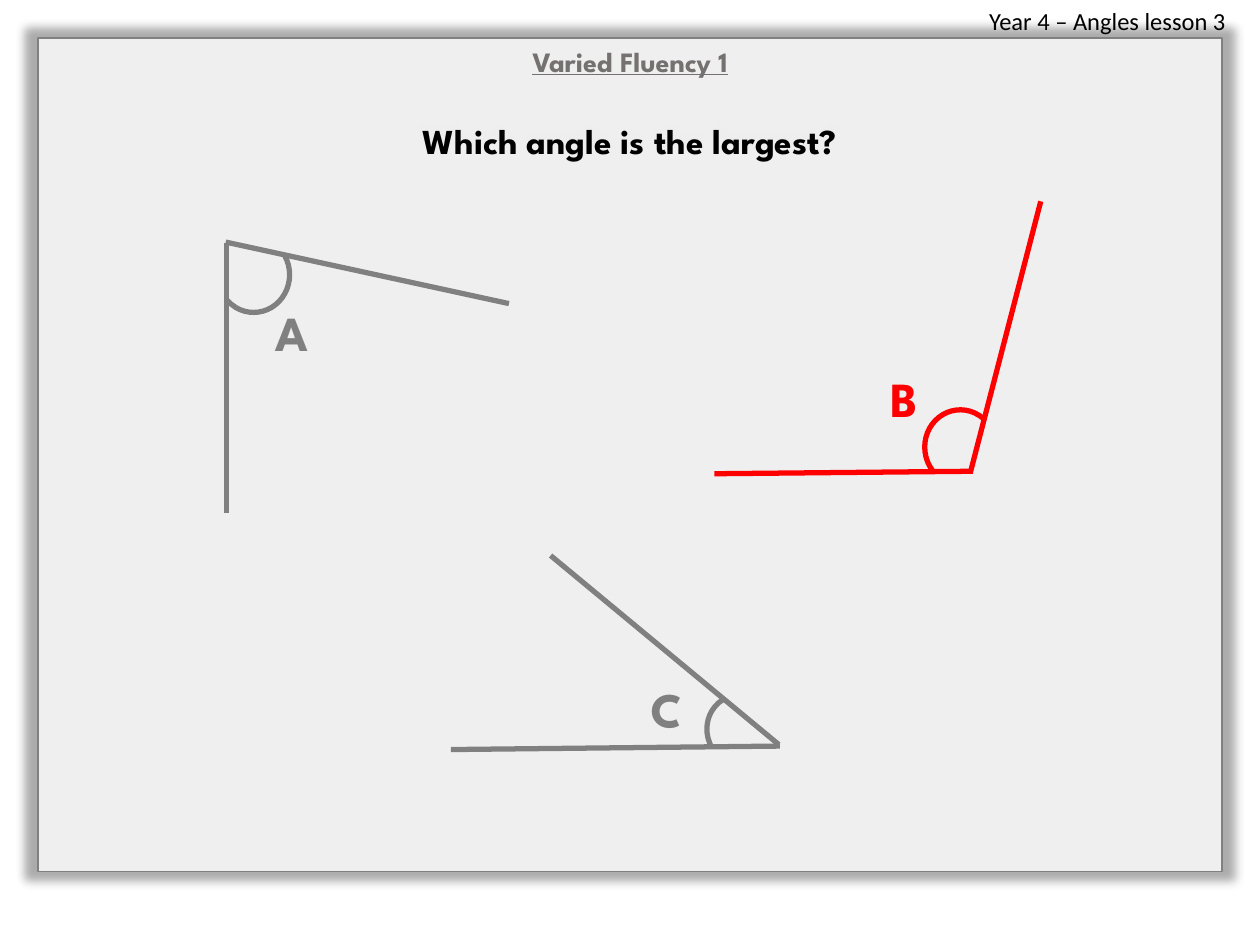
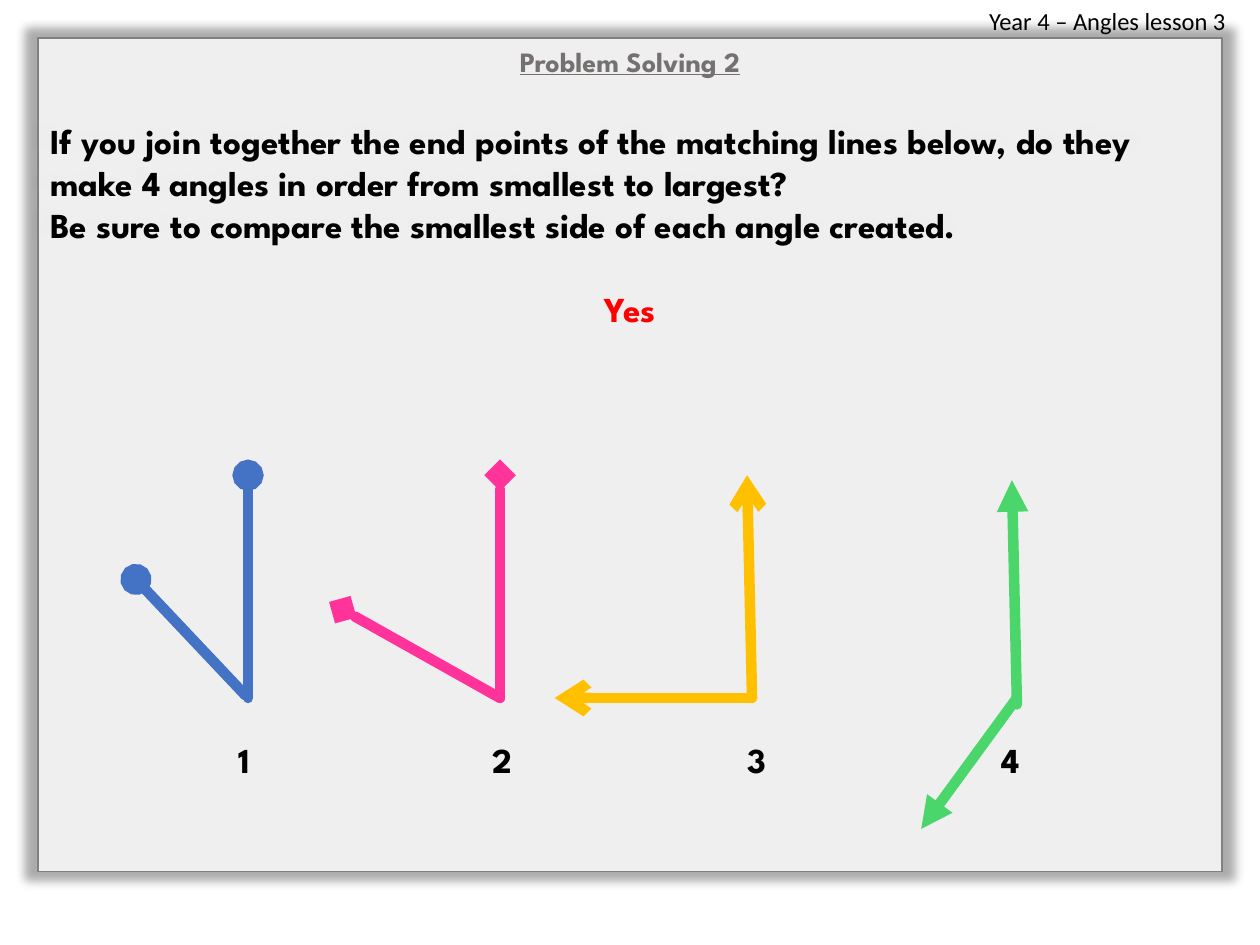
from dataclasses import dataclass

from lxml.etree import SubElement
from pptx import Presentation
from pptx.dml.color import RGBColor
from pptx.enum.shapes import MSO_CONNECTOR as Link, MSO_SHAPE as Preset
from pptx.enum.text import MSO_ANCHOR as Anchor, MSO_AUTO_SIZE as Fit, PP_ALIGN as Align
from pptx.oxml.ns import qn
from pptx.util import Cm, Pt


@dataclass(frozen=True)
class Theme:
    black: str = "000000"
    white: str = "FFFFFF"
    grey: str = "808080"
    title: str = "767171"
    red: str = "FF0000"
    blue: str = "4472C4"
    pink: str = "FF3399"
    gold: str = "FFC000"
    green: str = "4AD66B"
    font: str = "League Spartan"
    header_font: str = "Calibri"
    header_size: int = 14
    title_size: int = 16
    body_size: int = 20
    label_size: int = 28
    border: int = 1
    thin: int = 3
    thick: int = 6


PANEL = (0.76, 0.76, 23.88, 16.81)
HEADER = (19.69, 0, 5.49, 0.86)
ARC_SIZE = (1.45, 1.52)
LABEL_SIZE = (1.24, 1.45)
NUMBER_SIZE = (0.91, 1.12)


def set_all(target, values):
    for name, value in values.items():
        setattr(target, name, value)


def lengths(*values):
    return [Cm(value) for value in values]


class Lesson:
    def __init__(self, theme):
        self.theme = theme
        self.deck = Presentation()
        set_all(self.deck, {"slide_width": Cm(25.4), "slide_height": Cm(19.05)})
        self.page = None

    def add_page(self, title, paragraphs):
        theme = self.theme
        self.page = self.deck.slides.add_slide(self.deck.slide_layouts[5])
        self.add_text(HEADER, "Year 4 – Angles lesson 3", size=theme.header_size,
                      font=theme.header_font, bold=False)
        panel = self.add_panel(paragraphs)
        heading = self.page.shapes.title
        left, top, width, _ = PANEL
        set_all(heading, dict(zip(("left", "top", "width", "height"),
                                  lengths(left, top, width, 0.95))))
        self.format_frame(heading.text_frame, vertical_anchor=Anchor.TOP)
        self.fill_para(heading.text_frame.paragraphs[0], title, theme.title,
                       theme.title_size, align=Align.CENTER, underline=True)
        panel.element.addnext(heading.element)

    def add_panel(self, paragraphs):
        theme = self.theme
        panel = self.page.shapes.add_shape(Preset.RECTANGLE, *lengths(*PANEL))
        panel.fill.solid()
        panel.fill.fore_color.rgb = RGBColor.from_string(theme.white)
        colour = panel.element.spPr.find(".//" + qn("a:srgbClr"))
        SubElement(colour, qn("a:alpha"), val="82000")
        self.format_line(panel.line, theme.grey, theme.border)
        panel.shadow.inherit = False
        effects = panel.element.spPr.find(qn("a:effectLst"))
        glow = SubElement(effects, qn("a:outerShdw"), blurRad="63500", sx="102000",
                          sy="102000", algn="ctr", rotWithShape="0")
        shade = SubElement(glow, qn("a:srgbClr"), val=theme.black)
        SubElement(shade, qn("a:alpha"), val="40000")
        frame = panel.text_frame
        self.format_frame(frame, vertical_anchor=Anchor.TOP, margin_top=Cm(1.65))
        for index, (text, colour, align, before) in enumerate(paragraphs):
            para = frame.add_paragraph() if index else frame.paragraphs[0]
            self.fill_para(para, text, colour, theme.body_size, align=align)
            para.space_before = Pt(before)
        return panel

    def format_frame(self, frame, **changes):
        set_all(frame, {"word_wrap": True, "auto_size": Fit.NONE,
                        "margin_left": Cm(0.25), "margin_right": Cm(0.25),
                        "margin_top": Cm(0.13), "margin_bottom": Cm(0.13), **changes})

    def format_line(self, line, colour, width):
        line.color.rgb = RGBColor.from_string(colour)
        line.width = Pt(width)

    def fill_para(self, para, text, colour, size, align=Align.LEFT, font=None,
                  bold=True, underline=False):
        set_all(para, {"alignment": align, "line_spacing": 1.0})
        span = para.add_run()
        span.text = text
        set_all(span.font, {"name": font or self.theme.font, "size": Pt(size),
                            "bold": bold, "underline": underline})
        span.font.color.rgb = RGBColor.from_string(colour)

    def add_text(self, place, text, colour=None, size=20, align=Align.LEFT, font=None,
                 bold=True, shapes=None, rotation=0, **frame_values):
        box = (shapes or self.page.shapes).add_textbox(*lengths(*place))
        box.rotation = rotation
        self.format_frame(box.text_frame, **frame_values)
        self.fill_para(box.text_frame.paragraphs[0], text, colour or self.theme.black,
                       size, align, font, bold)

    def add_ray(self, shapes, points, colour, width, head=None):
        ray = shapes.add_connector(Link.STRAIGHT, *lengths(*points))
        self.format_line(ray.line, colour, width)
        properties = ray.element.spPr
        if head:
            line = properties.find(qn("a:ln"))
            line.set("cap", "rnd")
            SubElement(line, qn("a:tailEnd"), type=head)
        SubElement(properties, qn("a:effectLst"))

    def add_arc(self, shapes, place, sweep, rotation, colour):
        arc = shapes.add_shape(Preset.ARC, *lengths(*place, *ARC_SIZE))
        for index, value in enumerate(sweep):
            arc.adjustments[index] = value
        arc.rotation = rotation
        arc.shadow.inherit = False
        arc.fill.background()
        self.format_line(arc.line, colour, self.theme.thin)

    def add_angle(self, letter, colour, rays, arc, sweep, turn, label, tilt):
        shapes = self.page.shapes.add_group_shape().shapes
        self.add_arc(shapes, arc, sweep, turn, colour)
        for points in rays:
            self.add_ray(shapes, points, colour, self.theme.thin)
        self.add_text((*label, *LABEL_SIZE), letter, colour, self.theme.label_size,
                      Align.CENTER, shapes=shapes, rotation=tilt,
                      vertical_anchor=Anchor.MIDDLE)

    def add_numbered_angle(self, number, colour, head, rays):
        for points in rays:
            self.add_ray(self.page.shapes, points, colour, self.theme.thick, head)
        left = 4.55 + 5.13 * (number - 1)
        self.add_text((left, 14.76, *NUMBER_SIZE), str(number),
                      size=self.theme.body_size, word_wrap=False)


def main():
    theme = Theme()
    lesson = Lesson(theme)

    lesson.add_page("Varied Fluency 1", [
        ("Which angle is the largest?", theme.black, Align.CENTER, 0)])
    wide_sweep, narrow_sweep = (196.89, 81.66), (16.79, 64.57)
    lettered_angles = [
        ("A", theme.grey, [(4.57, 10.34, 4.57, 4.9), (4.55, 4.88, 10.26, 6.12)],
         (4.39, 4.78), wide_sweep, 0, (5.26, 5.97), 0),
        ("B", theme.red, [(20.98, 4.06, 19.56, 9.53), (19.61, 9.5, 14.4, 9.55)],
         (18.64, 8.26), wide_sweep, 172.7, (17.6, 7.29), 0),
        ("C", theme.grey, [(11.1, 11.2, 15.7, 15.01), (15.72, 15.04, 9.09, 15.11)],
         (14.27, 13.97), narrow_sweep, 129.2, (12.83, 13.56), 1.6),
    ]
    for angle in lettered_angles:
        lesson.add_angle(*angle)

    lesson.add_page("Problem Solving 2", [
        ("If you join together the end points of the matching lines below, do they "
         "make 4 angles in order from smallest to largest?",
         theme.black, Align.LEFT, 0),
        ("Be sure to compare the smallest side of each angle created.",
         theme.black, Align.LEFT, 0),
        ("Yes", theme.red, Align.CENTER, 24)])
    numbered_angles = [
        (theme.blue, "oval", [(4.95, 14.02, 2.74, 11.68), (5, 14.07, 5, 9.58)]),
        (theme.pink, "diamond",
         [(10.08, 14.07, 6.91, 12.29), (10.08, 14.07, 10.08, 9.58)]),
        (theme.gold, "arrow",
         [(15.16, 14.07, 11.18, 14.07), (15.16, 14.07, 15.06, 9.58)]),
        (theme.green, "triangle",
         [(20.5, 14.07, 18.57, 16.71), (20.5, 14.2, 20.4, 9.68)]),
    ]
    for number, angle in enumerate(numbered_angles, start=1):
        lesson.add_numbered_angle(number, *angle)

    lesson.deck.save("out.pptx")


if __name__ == "__main__":
    main()
